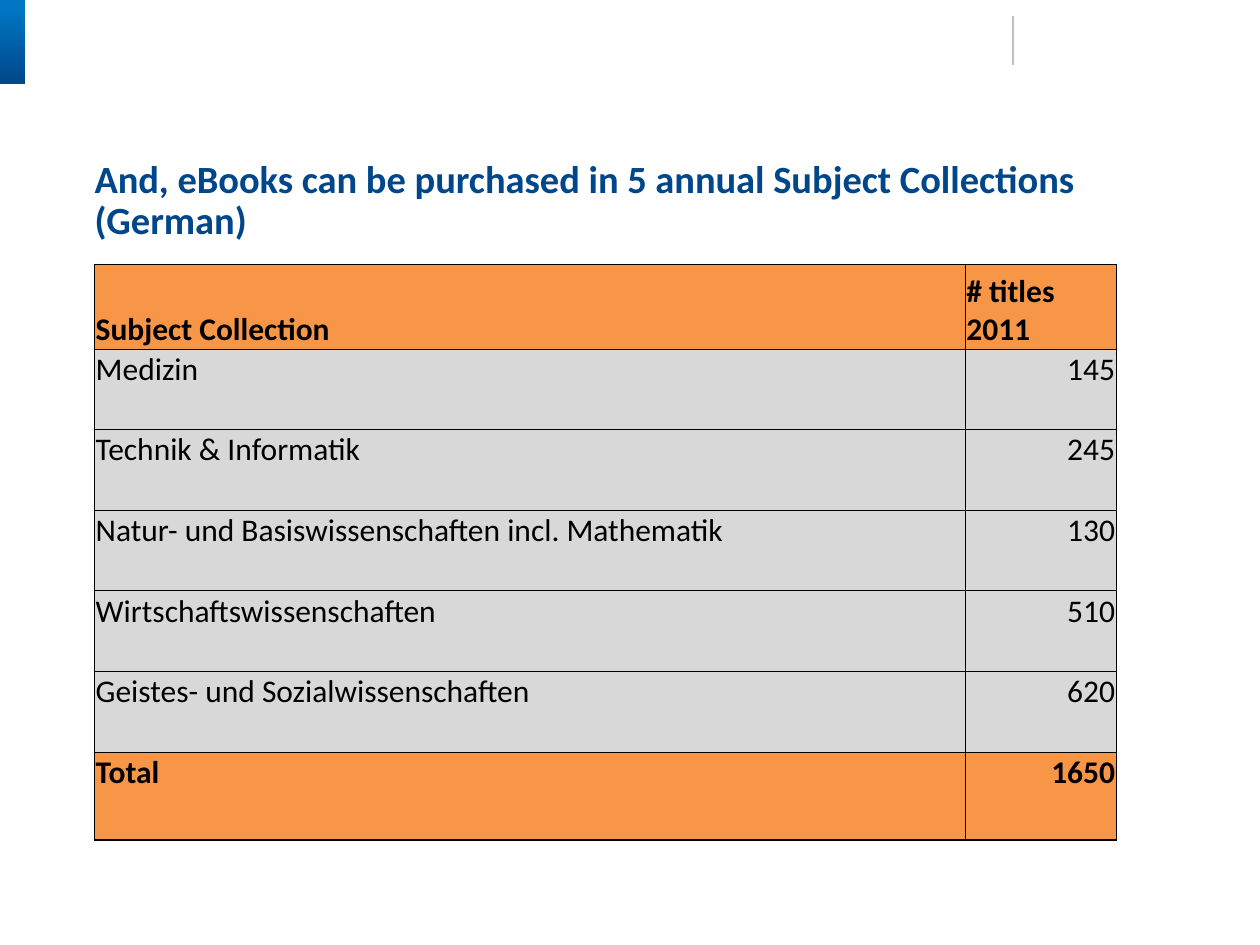
from lxml.etree import SubElement
from pptx import Presentation
from pptx.dml.color import RGBColor
from pptx.enum.shapes import MSO_CONNECTOR, MSO_SHAPE
from pptx.enum.text import MSO_ANCHOR, PP_ALIGN
from pptx.oxml import parse_xml
from pptx.oxml.ns import nsdecls, qn
from pptx.util import Inches, Pt

NAVY = RGBColor(0x00, 0x46, 0x8A)
BLUE = RGBColor(0x01, 0x76, 0xC3)
ORANGE = RGBColor(0xF7, 0x96, 0x46)
GRAY = RGBColor(0xD8, 0xD8, 0xD8)
RULE_GRAY = RGBColor(0xBF, 0xBF, 0xBF)
BLACK = RGBColor(0x00, 0x00, 0x00)
FONT = "Calibri"

ROWS = [
    ("Subject Collection", "# titles 2011"),
    ("Medizin", "145"),
    ("Technik & Informatik", "245"),
    ("Natur- und Basiswissenschaften incl. Mathematik", "130"),
    ("Wirtschaftswissenschaften", "510"),
    ("Geistes- und Sozialwissenschaften", "620"),
    ("Total", "1650"),
]
COL_WIDTHS = [6.91, 1.2]
ROW_HEIGHTS = [0.67] + [0.64] * 5 + [0.7]


def style_run(p, size, color, bold):
    """Format the first run of a paragraph."""
    font = p.runs[0].font
    font.name, font.size, font.bold = FONT, Pt(size), bold
    font.color.rgb = color


def add_corner_bar(s):
    """Draw the gradient bar in the top left corner."""
    bar = s.shapes.add_shape(MSO_SHAPE.RECTANGLE, 0, 0, Inches(0.2), Inches(0.67))
    bar.shadow.inherit = False
    bar.line.fill.background()
    bar.fill.gradient()
    bar.fill.gradient_angle = 270
    for stop, position, color in zip(bar.fill.gradient_stops, (0.1, 1), (BLUE, NAVY)):
        stop.position = position
        stop.color.rgb = color


def add_header_rule(s):
    """Draw the thin vertical rule in the header."""
    x = Inches(8.04)
    rule = s.shapes.add_connector(MSO_CONNECTOR.STRAIGHT, x, Inches(0.13), x, Inches(0.52))
    rule.line.color.rgb = RULE_GRAY
    rule.line.width = Pt(0.75)
    SubElement(rule._element.spPr, qn("a:effectLst"))


def set_title(s, text):
    """Place and format the title placeholder."""
    title = s.shapes.title
    title.left, title.top = Inches(0.65), Inches(1.22)
    title.width, title.height = Inches(8.6), Inches(0.61)
    tf = title.text_frame
    tf.text = text
    tf.word_wrap = True
    tf.vertical_anchor = MSO_ANCHOR.TOP
    p = tf.paragraphs[0]
    p.alignment = PP_ALIGN.LEFT
    p.line_spacing = 0.9
    style_run(p, 22, NAVY, True)


def set_borders(cell, widths):
    """Give a cell black borders, with widths for left, right, top and bottom."""
    tc_pr = cell._tc.get_or_add_tcPr()
    for i, (side, width) in enumerate(zip("LRTB", widths)):
        tc_pr.insert(i, parse_xml(
            f'<a:ln{side} {nsdecls("a")} w="{Pt(width)}"><a:solidFill>'
            f'<a:srgbClr val="{BLACK}"/></a:solidFill></a:ln{side}>'))


def fill_cell(cell, text, is_header, is_total, is_number):
    """Write and format one table cell."""
    strong = is_header or is_total
    cell.text = text
    cell.margin_left = cell.margin_right = cell.margin_top = Inches(0.01)
    cell.margin_bottom = 0
    cell.vertical_anchor = MSO_ANCHOR.BOTTOM if is_header else MSO_ANCHOR.TOP
    cell.fill.solid()
    cell.fill.fore_color.rgb = ORANGE if strong else GRAY
    p = cell.text_frame.paragraphs[0]
    p.alignment = PP_ALIGN.RIGHT if is_number and not is_header else PP_ALIGN.LEFT
    style_run(p, 18, BLACK, strong)
    outer = (not is_number, is_number, is_header, is_total)
    set_borders(cell, [1 if edge else 0.5 for edge in outer])


def add_collection_table(s):
    """Add the table of subject collections."""
    table = s.shapes.add_table(
        len(ROWS), len(COL_WIDTHS), Inches(0.75), Inches(2.1),
        Inches(sum(COL_WIDTHS)), Inches(sum(ROW_HEIGHTS))).table
    table.horz_banding = False
    for column, width in zip(table.columns, COL_WIDTHS):
        column.width = Inches(width)
    last = len(ROWS) - 1
    for i, values in enumerate(ROWS):
        table.rows[i].height = Inches(ROW_HEIGHTS[i])
        for j, text in enumerate(values):
            fill_cell(table.cell(i, j), text, i == 0, i == last, j == 1)


def main():
    """Build the slide and save it."""
    prs = Presentation()
    prs.slide_width, prs.slide_height = Inches(10), Inches(7.5)
    s = prs.slides.add_slide(prs.slide_layouts[5])
    add_corner_bar(s)
    add_header_rule(s)
    set_title(s, "And, eBooks can be purchased in 5 annual Subject Collections (German)")
    add_collection_table(s)
    prs.save("out.pptx")


if __name__ == "__main__":
    main()
